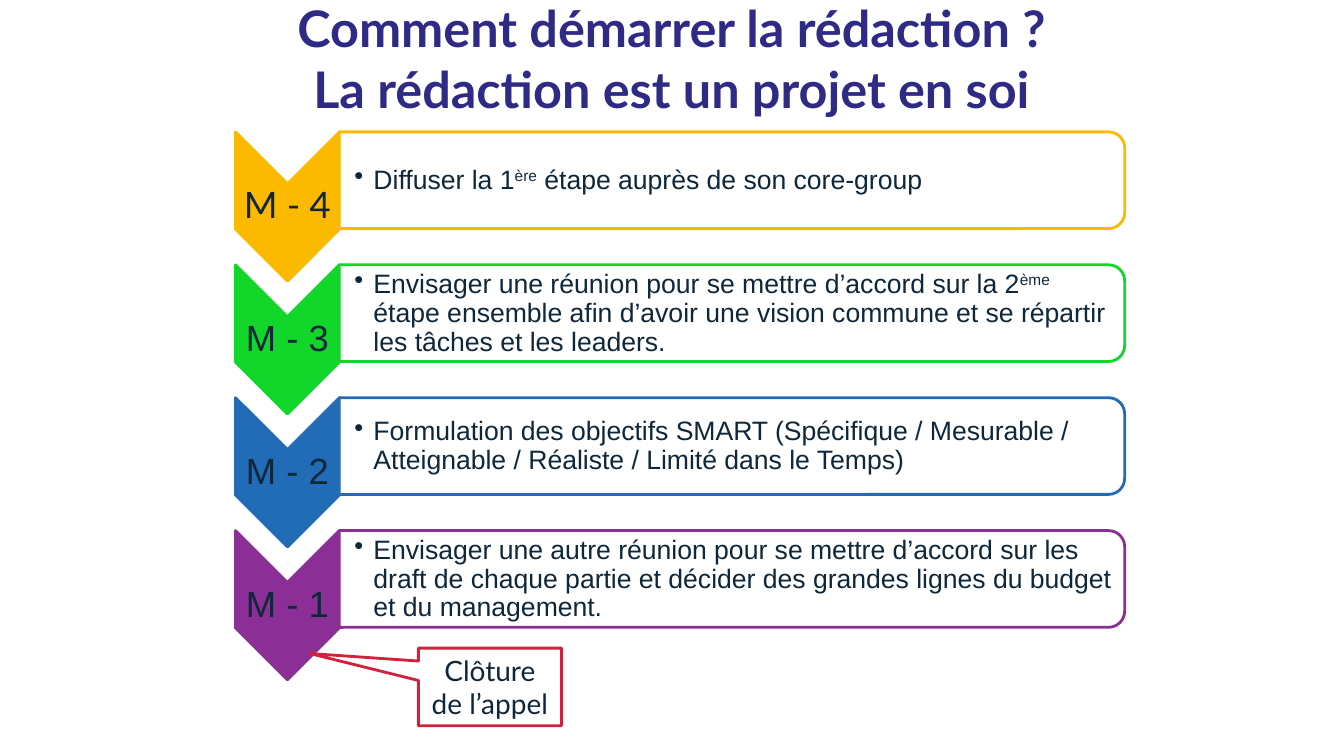
from lxml import etree
from pptx import Presentation
from pptx import util as u
from pptx.dml.color import RGBColor
from pptx.enum import shapes, text
from pptx.oxml.ns import qn

W, H = u.Inches(13.33), u.Inches(7.5)
COLORS = {
    "title": "2F2A85", "ink": "0F273B", "white": "FFFFFF", "close": "D2213C",
    "yellow": "FBBA00", "green": "12D72A", "blue": "226BB6", "purple": "8B2F97",
}

# Grid, in percent of the slide's width (x) and height (y)
ROW_TOP, ROW_STEP = 17.45, 17.58
CHEVRON_X, CHEVRON_W, CHEVRON_H = 17.52, 7.73, 19.73
BAR_X, BAR_W, BAR_H = 25.24, 58.44, 12.8

# Label, label font, colour, runs of (text, is superscript)
STEPS = [
    ("M - 4", "Lato", "yellow",
     [("Diffuser la 1", False), ("ère", True),
      (" étape auprès de son core-group", False)]),
    ("M - 3", "Arial", "green",
     [("Envisager une réunion pour se mettre d’accord sur la 2", False),
      ("ème", True),
      (" étape ensemble afin d’avoir une vision commune et se répartir "
       "les tâches et les leaders.", False)]),
    ("M - 2", "Arial", "blue",
     [("Formulation des objectifs SMART (Spécifique / Mesurable / "
       "Atteignable / Réaliste / Limité dans le Temps)", False)]),
    ("M - 1", "Arial", "purple",
     [("Envisager une autre réunion pour se mettre d’accord sur les draft "
       "de chaque partie et décider des grandes lignes du budget et du "
       "management.", False)]),
]


def rgb(name):
    return RGBColor.from_string(COLORS[name])


def box(x, y, w, h):
    return [int(v * side / 100) for v, side in zip((x, y, w, h), (W, H, W, H))]


def add_run(p, words, size, font, color="ink", bold=False, raised=False):
    r = p.add_run()
    r.text = words
    r.font.size, r.font.name, r.font.bold = u.Pt(size), font, bold
    r.font.color.rgb = rgb(color)
    if raised:
        r.font._element.set("baseline", "30000")


def set_frame(sp, insets=(0.1, 0.05, 0.1, 0.05)):
    tf = sp.text_frame
    tf.word_wrap = True
    tf.vertical_anchor = text.MSO_ANCHOR.MIDDLE
    (tf.margin_left, tf.margin_top,
     tf.margin_right, tf.margin_bottom) = map(u.Inches, insets)
    return tf


def add_shape(slide, kind, area, fill, line, turned=False):
    x, y, w, h = area
    if turned:  # a quarter turn swaps the sides around the centre
        x, y, w, h = x + (w - h) // 2, y + (h - w) // 2, h, w
    sp = slide.shapes.add_shape(kind, x, y, w, h)
    sp.rotation = 90 if turned else 0
    sp.shadow.inherit = False
    sp.fill.solid()
    sp.fill.fore_color.rgb = rgb(fill)
    sp.line.color.rgb = rgb(line)
    sp.line.width = u.Pt(2)
    return sp


def add_title(slide, lines):
    tf = set_frame(slide.shapes.add_textbox(*box(12.38, 0.67, 75.17, 14)))
    for i, words in enumerate(lines):
        p = tf.add_paragraph() if i else tf.paragraphs[0]
        p.alignment = text.PP_ALIGN.CENTER
        add_run(p, words, 36, "Lato", "title", bold=True)


def add_step(slide, top, label, font, color, runs):
    # Chevron and its label
    add_shape(slide, shapes.MSO_SHAPE.CHEVRON,
              box(CHEVRON_X, top, CHEVRON_W, CHEVRON_H), color, color, True)
    sp = slide.shapes.add_textbox(*box(CHEVRON_X, top + 6.95, CHEVRON_W, 5.87))
    p = set_frame(sp, [0.02] * 4).paragraphs[0]
    p.alignment, p.line_spacing = text.PP_ALIGN.CENTER, 0.9
    add_run(p, label, 26, font)

    # Bar, slightly transparent
    sp = add_shape(slide, shapes.MSO_SHAPE.ROUND_2_SAME_RECTANGLE,
                   box(BAR_X, top, BAR_W, BAR_H), "white", color, True)
    clr = sp._element.spPr.find(qn("a:solidFill")).find(qn("a:srgbClr"))
    etree.SubElement(clr, qn("a:alpha")).set("val", "90000")

    # Bulleted description
    sp = slide.shapes.add_textbox(*box(BAR_X, top + 0.68, 58.06, 11.6))
    p = set_frame(sp, (0.15, 0.01, 0.01, 0.01)).paragraphs[0]
    p.line_spacing = 0.9
    pPr = p._p.get_or_add_pPr()
    pPr.set("marL", str(u.Inches(0.19)))
    pPr.set("indent", str(-u.Inches(0.19)))
    etree.SubElement(pPr, qn("a:buChar")).set("char", "•")
    for words, raised in runs:
        add_run(p, words, 19, "Arial", raised=raised)


def add_callout(slide, words):
    sp = add_shape(slide, shapes.MSO_SHAPE.RECTANGULAR_CALLOUT,
                   box(31.13, 85.73, 10.65, 10.27), "white", "close")
    sp.adjustments[0], sp.adjustments[1] = -1.26, -0.43
    p = set_frame(sp).paragraphs[0]
    p.alignment = text.PP_ALIGN.CENTER
    add_run(p, words, 20, "Lato")


def main():
    prs = Presentation()
    prs.slide_width, prs.slide_height = W, H
    slide = prs.slides.add_slide(prs.slide_layouts[6])
    add_title(slide, ["Comment démarrer la rédaction ?",
                      "La rédaction est un projet en soi"])
    for i, step in enumerate(STEPS):
        add_step(slide, ROW_TOP + i * ROW_STEP, *step)
    add_callout(slide, "Clôture de l’appel")
    prs.save("out.pptx")


if __name__ == "__main__":
    main()
